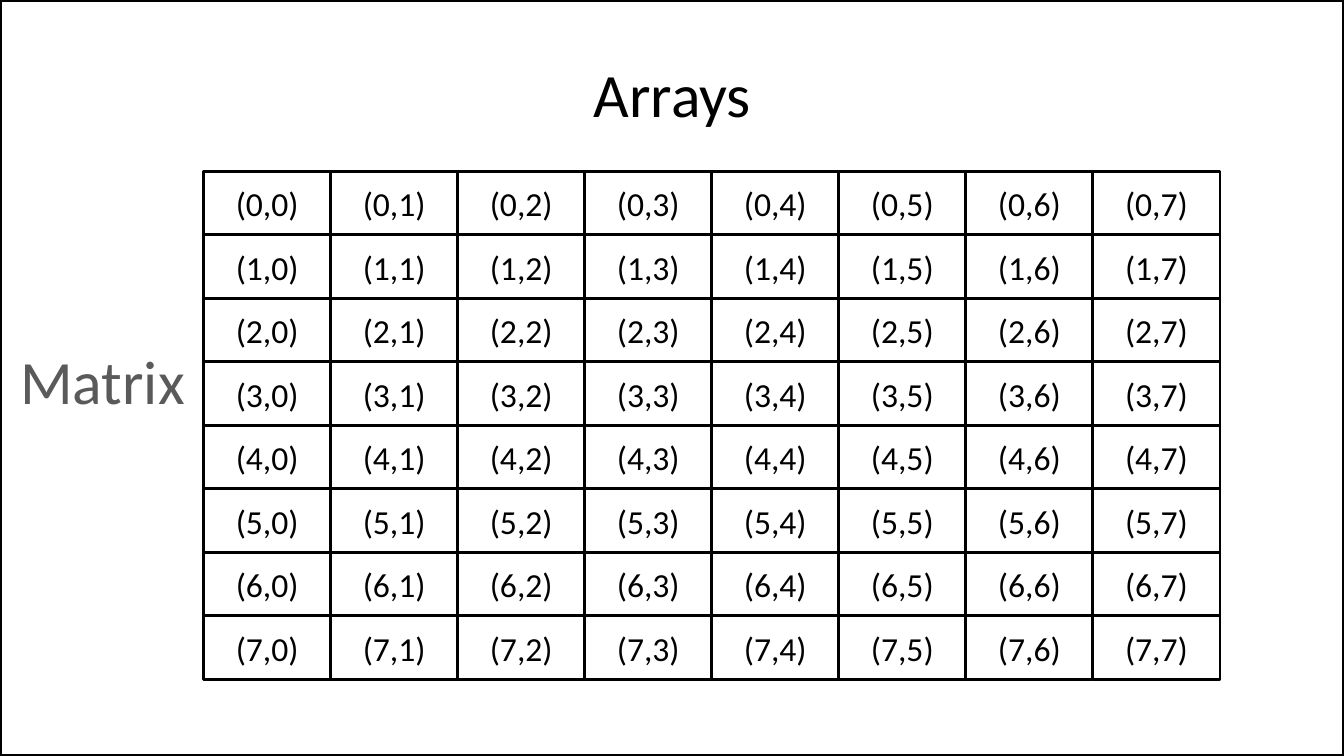
"""Build the Arrays slide: a title, a side label and a matrix of index pairs."""
from dataclasses import dataclass

from pptx import Presentation
from pptx.dml.color import RGBColor
from pptx.enum.shapes import MSO_SHAPE
from pptx.enum.text import MSO_ANCHOR, MSO_AUTO_SIZE, PP_ALIGN
from pptx.util import Inches, Pt

RECTANGLE = MSO_SHAPE.RECTANGLE
CENTER = PP_ALIGN.CENTER
MIDDLE, TOP = MSO_ANCHOR.MIDDLE, MSO_ANCHOR.TOP
FIT_SHAPE = MSO_AUTO_SIZE.SHAPE_TO_FIT_TEXT

SIDE = 8
TITLE_ONLY = 5


@dataclass(frozen=True)
class Theme:
    """Colours, font, type sizes and line widths of the slide."""

    font: str = "Calibri"
    ink: RGBColor = RGBColor(0, 0, 0)
    label: RGBColor = RGBColor(0x5A, 0x5A, 0x5A)
    heading_size: int = 44
    cell_size: int = 24
    frame_line: int = 3
    cell_line: int = 2


@dataclass(frozen=True)
class Grid:
    """Matrix origin and cell size in inches."""

    left: float = 2.02
    top: float = 1.7
    column: float = 1.26
    row: float = 0.63


@dataclass(frozen=True)
class Area:
    """Place and size counted in matrix columns and rows."""

    column: float
    row: float
    columns: float = 1
    rows: float = 1

    def bounds(self) -> tuple[int, int, int, int]:
        """Return left, top, width and height as slide lengths."""
        return (
            Inches(GRID.left + self.column * GRID.column),
            Inches(GRID.top + self.row * GRID.row),
            Inches(self.columns * GRID.column),
            Inches(self.rows * GRID.row),
        )


THEME = Theme()
GRID = Grid()
TITLE_AREA = Area(-1.07, -2.22, 9.52, 1.98)
LABEL_AREA = Area(-1.53, 2.63, 1.47, 1.33)


def write(box, text: str, *, size: int, color: RGBColor = THEME.ink,
          anchor=MIDDLE, wrap: bool = True) -> None:
    """Put one centred, formatted paragraph into a box."""
    frame = box.text_frame
    frame.word_wrap = wrap
    frame.vertical_anchor = anchor
    para = frame.paragraphs[0]
    para.alignment = CENTER
    span = para.add_run()
    span.text = text
    span.font.name = THEME.font
    span.font.size = Pt(size)
    span.font.color.rgb = color


def add_outline(slide, bounds: tuple[int, int, int, int], line_width: int):
    """Add an unfilled rectangle and return it."""
    box = slide.shapes.add_shape(RECTANGLE, *bounds)
    box.shadow.inherit = False
    box.fill.background()
    box.line.color.rgb = THEME.ink
    box.line.width = Pt(line_width)
    return box


def add_title(slide, text: str) -> None:
    """Place and fill the title placeholder."""
    title = slide.shapes.title
    title.left, title.top, title.width, title.height = TITLE_AREA.bounds()
    write(title, text, size=THEME.heading_size)


def add_label(slide, text: str) -> None:
    """Add the large label beside the matrix."""
    box = slide.shapes.add_textbox(*LABEL_AREA.bounds())
    write(box, text, size=THEME.heading_size, color=THEME.label,
          anchor=TOP, wrap=False)
    box.text_frame.auto_size = FIT_SHAPE


def add_matrix(slide) -> None:
    """Add one outlined cell for each index pair, column by column."""
    for column in range(SIDE):
        for row in range(SIDE):
            cell = add_outline(slide, Area(column, row).bounds(), THEME.cell_line)
            write(cell, f"({row},{column})", size=THEME.cell_size)


def main() -> None:
    """Build and save the deck."""
    deck = Presentation()
    deck.slide_width, deck.slide_height = Inches(13.33), Inches(7.5)
    slide = deck.slides.add_slide(deck.slide_layouts[TITLE_ONLY])
    add_outline(slide, (0, 0, deck.slide_width, deck.slide_height), THEME.frame_line)
    add_title(slide, "Arrays")
    add_label(slide, "Matrix")
    add_matrix(slide)
    deck.save("out.pptx")


if __name__ == "__main__":
    main()
